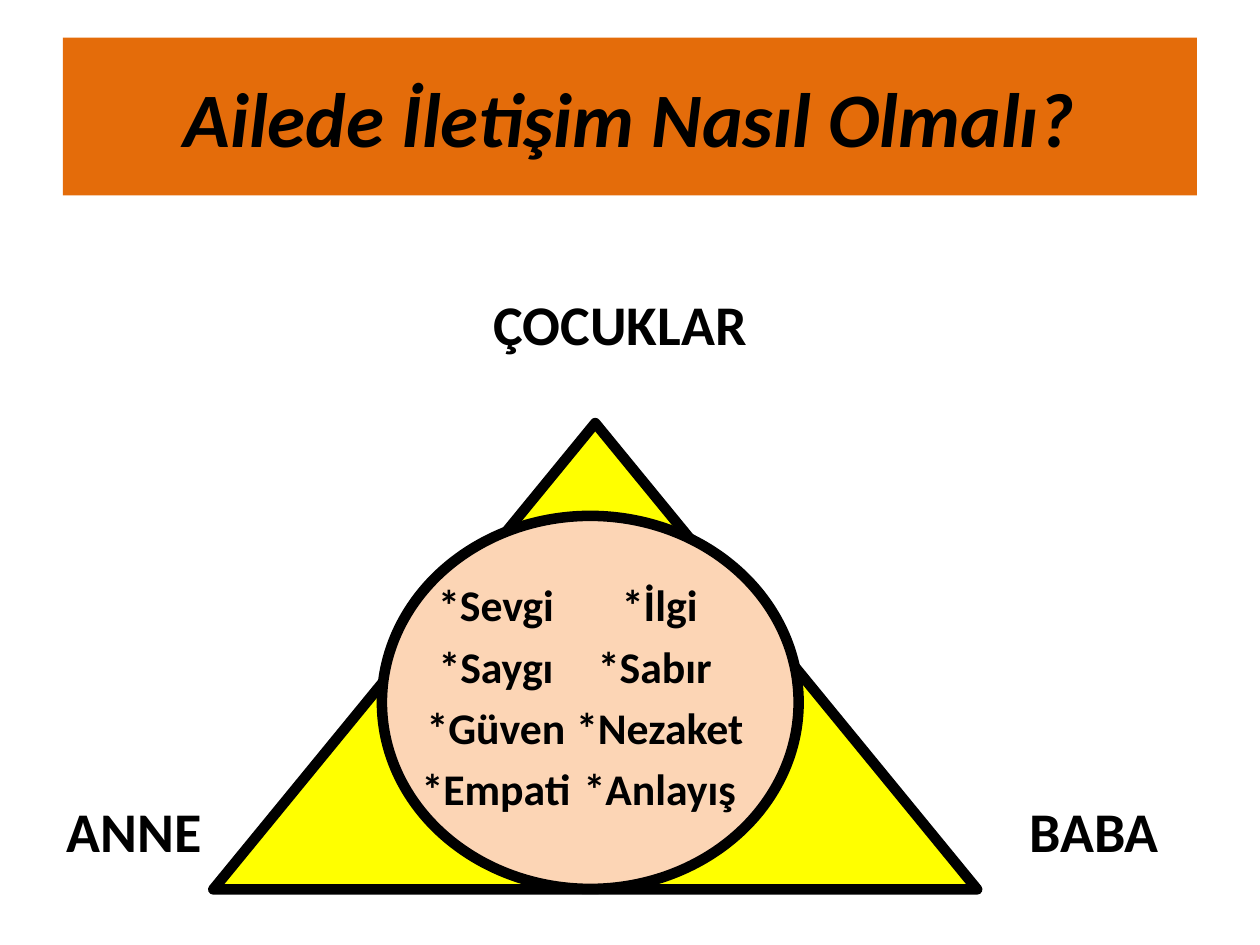
"""Build a slide on communication within the family."""
from dataclasses import dataclass

from lxml import etree
from pptx import Presentation
from pptx.dml.color import RGBColor
from pptx.enum.shapes import MSO_SHAPE
from pptx.enum.text import MSO_ANCHOR, PP_ALIGN
from pptx.oxml.ns import qn
from pptx.util import Cm, Pt

RECT = MSO_SHAPE.RECTANGLE
TRIANGLE = MSO_SHAPE.ISOSCELES_TRIANGLE
OVAL = MSO_SHAPE.OVAL
TOP, MIDDLE = MSO_ANCHOR.TOP, MSO_ANCHOR.MIDDLE
LEFT, CENTER = PP_ALIGN.LEFT, PP_ALIGN.CENTER


@dataclass(frozen=True)
class Theme:
    font: str = "Calibri"
    ink: str = "000000"
    banner: str = "E46C0A"
    yellow: str = "FFFF00"
    peach: str = "FCD5B5"
    title: int = 44
    label: int = 32
    value: int = 25
    line: int = 6


THEME = Theme()


def write(shape, text, size, align=LEFT, anchor=TOP, italic=False, before=0, after=0):
    frame = shape.text_frame
    frame.word_wrap = True
    frame.vertical_anchor = anchor
    frame.text = text
    for para in frame.paragraphs:
        para.alignment = align
        para.space_before, para.space_after = Pt(before), Pt(after)
        font = para.runs[0].font
        font.name, font.size = THEME.font, Pt(size)
        font.bold, font.italic = True, italic
        font.color.rgb = RGBColor.from_string(THEME.ink)


def draw(slide, kind, box, fill, lined=True):
    shape = slide.shapes.add_shape(kind, *map(Cm, box))
    shape.shadow.inherit = False
    shape.fill.solid()
    shape.fill.fore_color.rgb = RGBColor.from_string(fill)
    if lined:
        shape.line.color.rgb = RGBColor.from_string(THEME.ink)
        shape.line.width = Pt(THEME.line)
        etree.SubElement(shape.line._get_or_add_ln(), qn("a:round"))
    else:
        shape.line.fill.background()
    return shape


def label(slide, box, text, size=THEME.label, **style):
    area = slide.shapes.add_textbox(*map(Cm, box))
    write(area, text, size, before=2, **style)


def values(slide, left, width, words):
    label(slide, (left, 11.53, width, 4.4), "\n".join(words),
          size=THEME.value, align=CENTER, after=3)


def main():
    deck = Presentation()
    deck.slide_width, deck.slide_height = Cm(25.4), Cm(19.05)
    slide = deck.slides.add_slide(deck.slide_layouts[6])

    title = draw(slide, RECT, (1.27, 0.76, 22.86, 3.18), THEME.banner, lined=False)
    write(title, "Ailede İletişim Nasıl Olmalı?", THEME.title,
          align=CENTER, anchor=MIDDLE, italic=True)

    draw(slide, TRIANGLE, (4.3, 8.53, 15.4, 9.4), THEME.yellow)
    label(slide, (1.1, 15.93, 3.6, 1.8), "ANNE")
    label(slide, (20.5, 15.93, 3.6, 1.8), "BABA")
    label(slide, (9.7, 5.72, 6, 1.2), "ÇOCUKLAR")

    draw(slide, OVAL, (7.7, 10.4, 8.4, 7.52), THEME.peach)
    values(slide, 8.1, 3.8, ["*Sevgi", "*Saygı", "*Güven", "*Empati"])
    values(slide, 11.3, 4, ["*İlgi", "*Sabır ", "*Nezaket", "*Anlayış"])

    deck.save("out.pptx")


if __name__ == "__main__":
    main()
